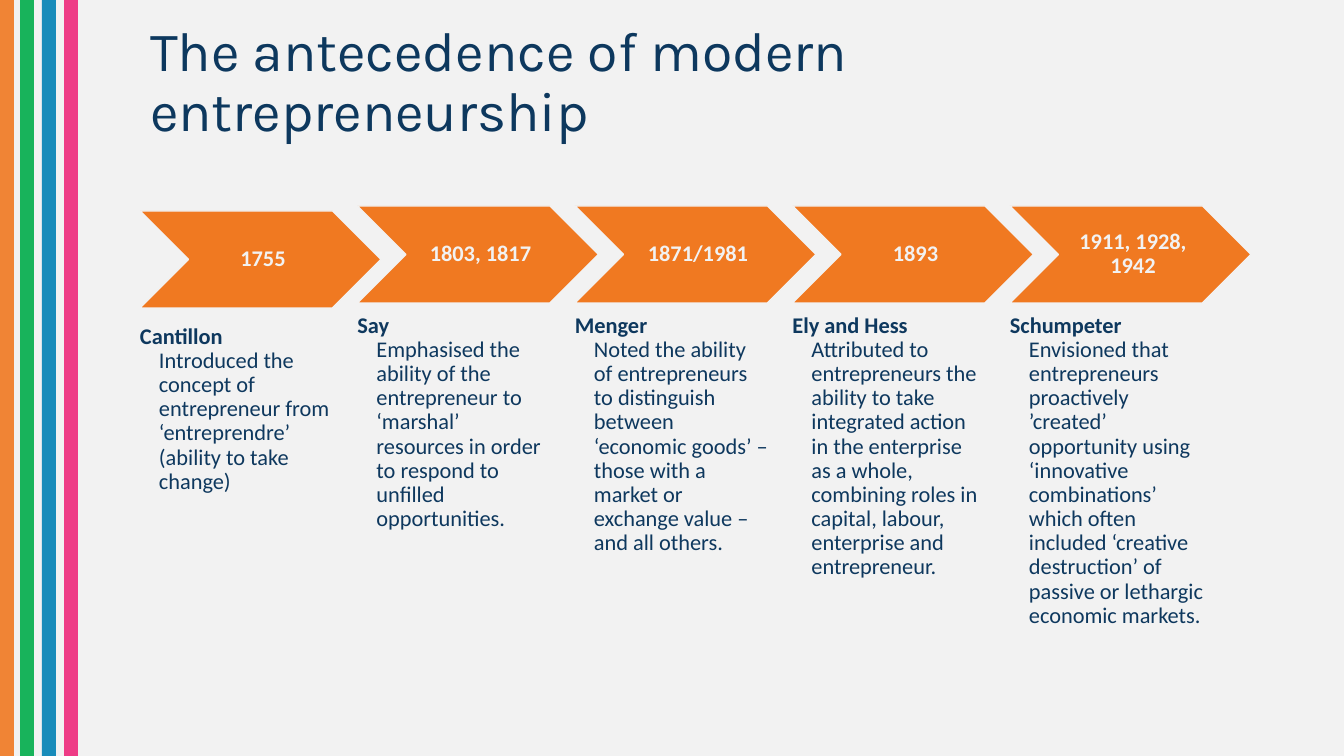
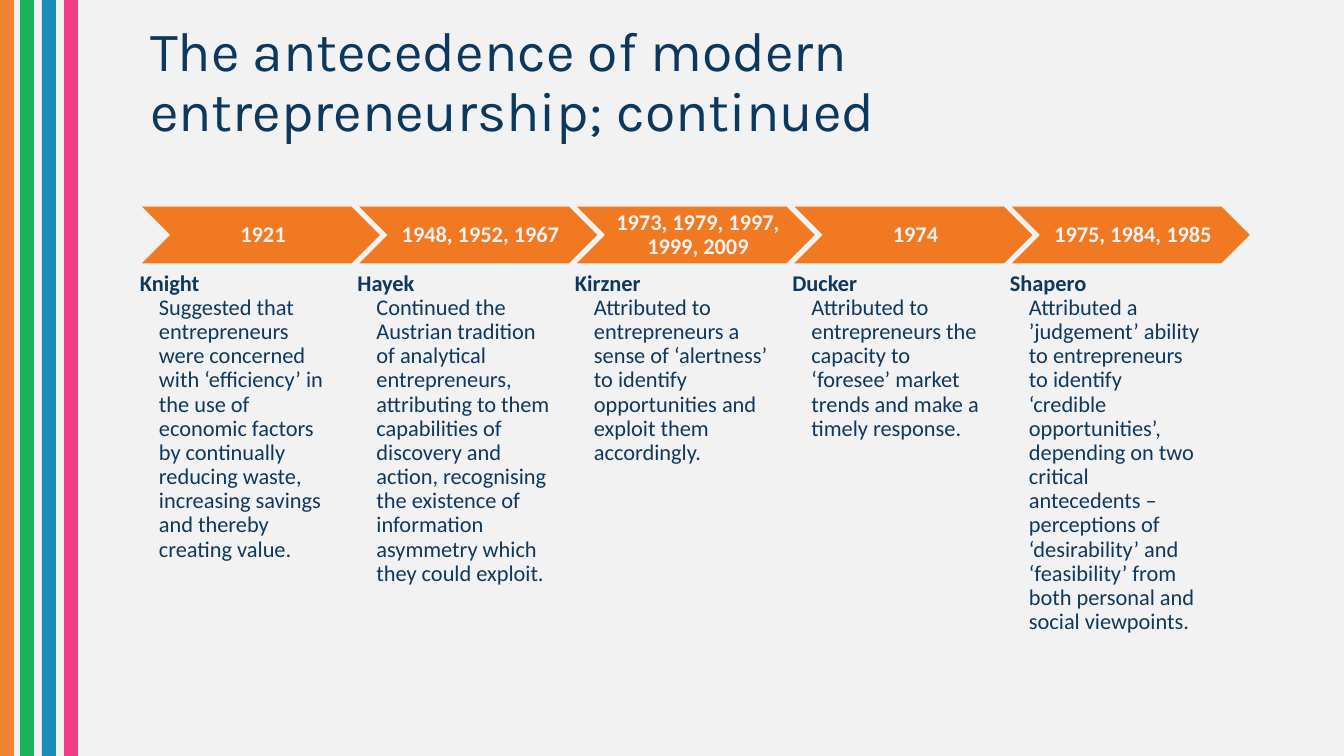
from lxml import etree
from pptx import Presentation
from pptx.dml.color import RGBColor
from pptx.enum.shapes import MSO_SHAPE
from pptx.enum.text import MSO_ANCHOR, PP_ALIGN
from pptx.oxml.ns import qn
from pptx.util import Emu, Pt

# Content: years, thinker, contribution
TIMELINES = [
    {
        "title": "The antecedence of modern entrepreneurship",
        "arrow_height": 97,
        "arrow_tops": [211, 206, 206, 206, 206],
        "note_tops": [325, 314, 314, 314, 314],
        "note_heights": [121, 137, 137, 137, 137],
        "steps": [
            ("1755", "Cantillon",
             "Introduced the concept of entrepreneur from ‘entreprendre’ "
             "(ability to take change)"),
            ("1803, 1817", "Say",
             "Emphasised the ability of the entrepreneur to ‘marshal’ "
             "resources in order to respond to unfilled opportunities."),
            ("1871/1981", "Menger",
             "Noted the ability of entrepreneurs to distinguish between "
             "‘economic goods’ – those with a market or exchange value – "
             "and all others."),
            ("1893", "Ely and Hess",
             "Attributed to entrepreneurs the ability to take integrated "
             "action in the enterprise as a whole, combining roles in "
             "capital, labour, enterprise and entrepreneur."),
            ("1911, 1928, 1942", "Schumpeter",
             "Envisioned that entrepreneurs proactively ’created’ "
             "opportunity using ‘innovative combinations’ which often "
             "included ‘creative destruction’ of passive or lethargic "
             "economic markets."),
        ],
    },
    {
        "title": "The antecedence of modern entrepreneurship; continued",
        "arrow_height": 58,
        "arrow_tops": [206] * 5,
        "note_tops": [272] * 5,
        "note_heights": [404] * 5,
        "steps": [
            ("1921", "Knight",
             "Suggested that entrepreneurs were concerned with ‘efficiency’ "
             "in the use of economic factors by continually reducing waste, "
             "increasing savings and thereby creating value."),
            ("1948, 1952, 1967", "Hayek",
             "Continued the Austrian tradition of analytical entrepreneurs, "
             "attributing to them capabilities of discovery and action, "
             "recognising the existence of information asymmetry which they "
             "could exploit."),
            ("1973, 1979, 1997, 1999, 2009", "Kirzner",
             "Attributed to entrepreneurs a sense of ‘alertness’ to identify "
             "opportunities and exploit them accordingly."),
            ("1974", "Ducker",
             "Attributed to entrepreneurs the capacity to ‘foresee’ market "
             "trends and make a timely response."),
            ("1975, 1984, 1985", "Shapero",
             "Attributed a ’judgement’ ability to entrepreneurs to identify "
             "‘credible opportunities’, depending on two critical "
             "antecedents – perceptions of ‘desirability’ and ‘feasibility’ "
             "from both personal and social viewpoints."),
        ],
    },
]

# Shared look
ORANGE = RGBColor(0xF0, 0x79, 0x21)
GREEN = RGBColor(0x01, 0xAD, 0x4B)
BLUE = RGBColor(0x02, 0x81, 0xB4)
PINK = RGBColor(0xEE, 0x29, 0x7B)
PALE = RGBColor(0xF2, 0xF2, 0xF2)
TITLE_NAVY = RGBColor(0x0D, 0x38, 0x5E)
NOTE_NAVY = RGBColor(0x0E, 0x38, 0x5E)

CHEVRON, RECTANGLE = MSO_SHAPE.CHEVRON, MSO_SHAPE.RECTANGLE
MIDDLE, TOP = MSO_ANCHOR.MIDDLE, MSO_ANCHOR.TOP
CENTER, LEFT = PP_ALIGN.CENTER, PP_ALIGN.LEFT

TITLE_FONT = {"name": "Karla", "size": Pt(39.6), "bold": False}
YEAR_FONT = {"name": "Calibri", "size": Pt(16), "bold": True}
THINKER_FONT = YEAR_FONT
NOTE_FONT = {**YEAR_FONT, "bold": False}

# Layout in px
SLIDE_W, SLIDE_H = 1344, 756
STRIPES = [(0, ORANGE), (20, GREEN), (42, BLUE), (64, PINK)]
STRIPE_W = 14
TITLE_BOX = (140, 40, 883, 146)
TITLE_INSETS = (10, 5, 10, 64)
FIRST_LEFT, LAST_LEFT = 140, 1010
ARROW_W, NOTE_W, HANGING = 241, 194, 19


def px(length):
    return Emu(round(length * 914400 / 100.8))


def box(*lengths):
    return [px(length) for length in lengths]


def set_attributes(target, values):
    for attribute, value in values.items():
        setattr(target, attribute, value)


def set_frame(frame, anchor, insets):
    sides = ("margin_left", "margin_top", "margin_right", "margin_bottom")
    set_attributes(frame, dict(zip(sides, box(*insets))))
    set_attributes(frame, {"word_wrap": True, "vertical_anchor": anchor})


def set_paragraph(paragraph, align):
    set_attributes(paragraph, {"alignment": align, "line_spacing": 0.9})


def add_run(paragraph, text, font, color):
    run = paragraph.add_run()
    run.text = text
    set_attributes(run.font, font)
    run.font.color.rgb = color


def add_filled(slide, preset, place, color):
    shape = slide.shapes.add_shape(preset, *box(*place))
    shape.shadow.inherit = False
    shape.fill.solid()
    shape.fill.fore_color.rgb = color
    return shape


def add_master_stripes(master, slide):
    """Draw the stripes, then hand them to the master for every slide."""
    for left, color in STRIPES:
        stripe = add_filled(slide, RECTANGLE, (left, 0, STRIPE_W, SLIDE_H), color)
        stripe.line.fill.background()
        rgb = stripe._element.spPr.find(qn("a:solidFill")).find(qn("a:srgbClr"))
        etree.SubElement(rgb, qn("a:alpha")).set("val", "90000")
        master.shapes._spTree.append(stripe._element)


def add_title(slide, text):
    title = slide.shapes.title
    places = ("left", "top", "width", "height")
    set_attributes(title, dict(zip(places, box(*TITLE_BOX))))
    set_frame(title.text_frame, MIDDLE, TITLE_INSETS)
    paragraph = title.text_frame.paragraphs[0]
    set_paragraph(paragraph, LEFT)
    add_run(paragraph, text, TITLE_FONT, TITLE_NAVY)


def add_arrow(slide, place, years):
    arrow = add_filled(slide, CHEVRON, place, ORANGE)
    arrow.line.color.rgb = PALE
    arrow.line.width = Pt(1)
    set_frame(arrow.text_frame, MIDDLE, (7, 2, 2, 2))
    paragraph = arrow.text_frame.paragraphs[0]
    set_paragraph(paragraph, CENTER)
    add_run(paragraph, years, YEAR_FONT, PALE)


def add_note(slide, place, thinker, contribution):
    frame = slide.shapes.add_textbox(*box(*place)).text_frame
    set_frame(frame, TOP, (0, 0, 0, 0))
    paragraph = frame.paragraphs[0]
    set_paragraph(paragraph, LEFT)
    properties = paragraph._p.get_or_add_pPr()
    properties.set("marL", str(px(HANGING)))
    properties.set("indent", str(-px(HANGING)))
    add_run(paragraph, thinker, THINKER_FONT, NOTE_NAVY)
    paragraph.add_line_break()
    add_run(paragraph, contribution, NOTE_FONT, NOTE_NAVY)


def add_timeline(slide, timeline):
    add_title(slide, timeline["title"])
    steps = timeline["steps"]
    pitch = (LAST_LEFT - FIRST_LEFT) / (len(steps) - 1)
    rows = zip(steps, timeline["arrow_tops"], timeline["note_tops"],
               timeline["note_heights"])
    for index, (step, arrow_top, note_top, note_height) in enumerate(rows):
        years, thinker, contribution = step
        left = FIRST_LEFT + index * pitch
        add_arrow(slide, (left, arrow_top, ARROW_W, timeline["arrow_height"]), years)
        add_note(slide, (left, note_top, NOTE_W, note_height), thinker, contribution)


def main():
    prs = Presentation()
    prs.slide_width, prs.slide_height = box(SLIDE_W, SLIDE_H)
    master = prs.slide_master
    master.background.fill.solid()
    master.background.fill.fore_color.rgb = PALE
    title_only = prs.slide_layouts[5]
    slides = [prs.slides.add_slide(title_only) for _ in TIMELINES]
    add_master_stripes(master, slides[0])
    for slide, timeline in zip(slides, TIMELINES):
        add_timeline(slide, timeline)
    prs.save("out.pptx")


if __name__ == "__main__":
    main()
